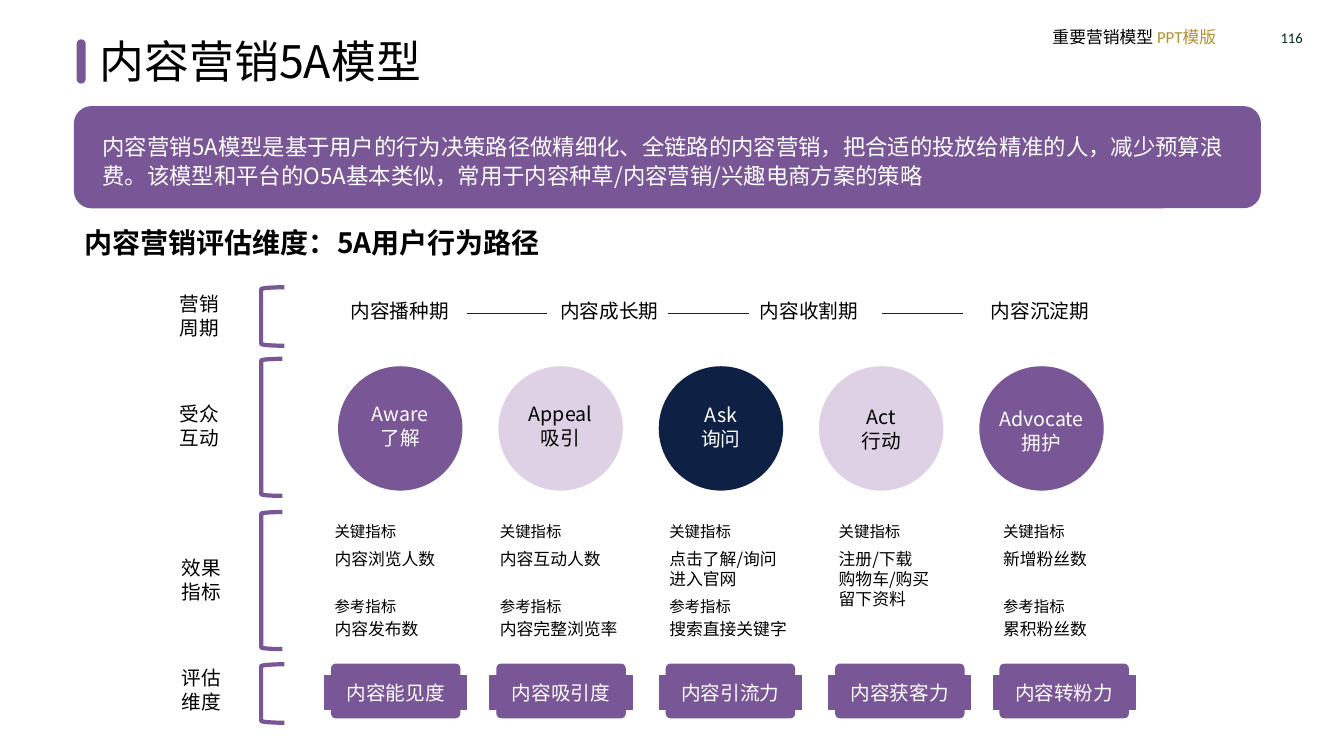
from pptx import Presentation
from pptx.dml.color import RGBColor
from pptx.enum.shapes import MSO_CONNECTOR, MSO_SHAPE as SHAPE
from pptx.enum.text import MSO_ANCHOR as ANCHOR, MSO_AUTO_SIZE as AUTO, PP_ALIGN as ALIGN
from pptx.oxml.ns import qn
from pptx.util import Emu, Pt
from lxml.etree import SubElement

COLORS = {
    "purple": "795696",
    "lilac": "DED1E5",
    "navy": "0E2044",
    "gold": "B49132",
    "green": "002E1A",
    "black": "000000",
    "white": "FFFFFF",
}
CJK = "Noto Sans CJK SC"
LATIN = "Calibri"
PX = 9144  # 100 px to the inch


def px(n):
    return Emu(n * PX)


def rgb(name):
    return RGBColor.from_string(COLORS[name])


class Deck:
    def __init__(self, width, height):
        self.prs = Presentation()
        self.prs.slide_width, self.prs.slide_height = px(width), px(height)
        self.slide = self.prs.slides.add_slide(self.prs.slide_layouts[6])

    def style(self, r, size, color, font=CJK, bold=False):
        r.font.size, r.font.name, r.font.bold = Pt(size), font, bold
        r.font.color.rgb = rgb(color)
        if font == CJK:
            SubElement(r.font._element, qn("a:ea")).set("typeface", font)

    def fill_text(self, tf, text, size, color, align=ALIGN.LEFT, font=CJK, bold=False):
        tf.text = text
        for p in tf.paragraphs:
            p.alignment = align
            for r in p.runs:
                self.style(r, size, color, font, bold)

    def text(self, x, y, w, h, text, size, color="black", align=ALIGN.LEFT,
             font=CJK, bold=False, wrap=True, grow=True):
        tf = self.slide.shapes.add_textbox(px(x), px(y), px(w), px(h)).text_frame
        self.fill_text(tf, text, size, color, align, font, bold)
        tf.word_wrap = wrap
        tf.auto_size = AUTO.SHAPE_TO_FIT_TEXT if grow else AUTO.NONE
        return tf

    def shape(self, kind, x, y, w, h, fill=None, line=None, weight=1, adj=None):
        sp = self.slide.shapes.add_shape(kind, px(x), px(y), px(w), px(h))
        sp.shadow.inherit = False
        if fill:
            sp.fill.solid()
            sp.fill.fore_color.rgb = rgb(fill)
        else:
            sp.fill.background()
        if line:
            sp.line.color.rgb = rgb(line)
            sp.line.width = Pt(weight)
        else:
            sp.line.fill.background()
        if adj is not None:
            sp.adjustments[0] = adj
        return sp

    def rule(self, x, y, length):
        """Draw a thin horizontal line."""
        line = self.slide.shapes.add_connector(
            MSO_CONNECTOR.STRAIGHT, px(x), px(y), px(x + length), px(y))
        line.line.color.rgb = rgb("navy")
        line.line.width = Pt(0.5)
        SubElement(line._element.spPr, qn("a:effectLst"))


def add_header(deck):
    deck.text(1002, 17, 300, 40, "116", 10.5, "green", ALIGN.RIGHT, LATIN,
              grow=False).vertical_anchor = ANCHOR.MIDDLE
    p = deck.text(1034, 22, 215, 30, "重要营销模型 ", 12, font=LATIN).paragraphs[0]
    r = p.add_run()
    r.text = "PPT模版"
    deck.style(r, 12, "gold", LATIN)

    deck.shape(SHAPE.ROUNDED_RECTANGLE, 76, 39, 9, 44, "purple", adj=0.5)
    deck.text(89, 29, 827, 64, "内容营销5A模型", 32)
    deck.shape(SHAPE.ROUNDED_RECTANGLE, 74, 106, 1176, 100, "purple", "purple")
    intro = deck.text(
        92, 124, 1140, 68,
        "内容营销5A模型是基于用户的行为决策路径做精细化、全链路的内容营销，"
        "把合适的投放给精准的人，减少预算浪费。该模型和平台的O5A基本类似，"
        "常用于内容种草/内容营销/兴趣电商方案的策略", 16, "white")
    intro.paragraphs[0].line_spacing = 1.1
    deck.text(74, 219, 787, 44, "内容营销评估维度：5A用户行为路径", 20, bold=True)


def add_row_labels(deck):
    rows = [  # label, label x, label y, bracket y, bracket width, bracket height
        ("营销\n周期", 168, 285, 285, 23, 58),
        ("受众\n互动", 168, 394, 356, 21, 136),
        ("效果\n指标", 170, 547, 508, 21, 136),
        ("评估\n维度", 170, 656, 659, 23, 58),
    ]
    for label, x, y, bracket_y, w, h in rows:
        deck.text(x, y, 59, 57, label, 14, align=ALIGN.CENTER, wrap=False)
        deck.shape(SHAPE.LEFT_BRACKET, 259, bracket_y, w, h, line="purple", weight=3)


def add_periods(deck):
    periods = [(335, "内容播种期"), (543, "内容成长期"),
               (741, "内容收割期"), (970, "内容沉淀期")]
    for x, period in periods:
        deck.text(x, 292, 123, 34, period, 14, align=ALIGN.CENTER)
    for x in (463, 663, 875):
        deck.rule(x, 311, 80)


def add_stages(deck):
    stages = [  # text, text y, fill, text colour
        ("Aware\n了解", 394, "purple", "white"),
        ("Appeal\n吸引", 394, "lilac", "black"),
        ("Ask\n询问", 395, "navy", "white"),
        ("Act\n行动", 397, "lilac", "black"),
        ("Advocate\n拥护", 399, "purple", "white"),
    ]
    for i, (label, y, fill, color) in enumerate(stages):
        x = 336 + 159 * i
        deck.shape(SHAPE.OVAL, x, 364, 122, 122, fill, fill)
        deck.text(x, y, 122, 57, label, 14, color, ALIGN.CENTER)


def add_metrics(deck):
    columns = [  # x, key metric, reference metric, dimension
        (322, "内容浏览人数", "内容发布数", "内容能见度"),
        (486, "内容互动人数", "内容完整浏览率", "内容吸引度"),
        (654, "点击了解/询问\n进入官网", "搜索直接关键字", "内容引流力"),
        (822, "注册/下载\n购物车/购买\n留下资料", None, "内容获客力"),
        (985, "新增粉丝数", "累积粉丝数", "内容转粉力"),
    ]
    for x, key, reference, dimension in columns:
        deck.text(x, 513, 123, 29, "关键指标", 11)
        deck.text(x, 539, 159, 10 + 20 * len(key.split("\n")), key, 12)
        if reference:
            deck.text(x, 587, 123, 29, "参考指标", 11)
            deck.text(x, 609, 159, 30, reference, 12)
        deck.shape(SHAPE.ROUNDED_RECTANGLE, x + 7, 659, 127, 53,
                   "purple", "purple", adj=0.08)
        tag = deck.shape(SHAPE.RECTANGLE, x, 670, 141, 34, "purple", "purple", 0.75)
        deck.fill_text(tag.text_frame, dimension, 14, "white", ALIGN.CENTER)


def main():
    deck = Deck(1333, 750)
    add_header(deck)
    add_row_labels(deck)
    add_periods(deck)
    add_stages(deck)
    add_metrics(deck)
    deck.prs.save("out.pptx")


if __name__ == "__main__":
    main()
